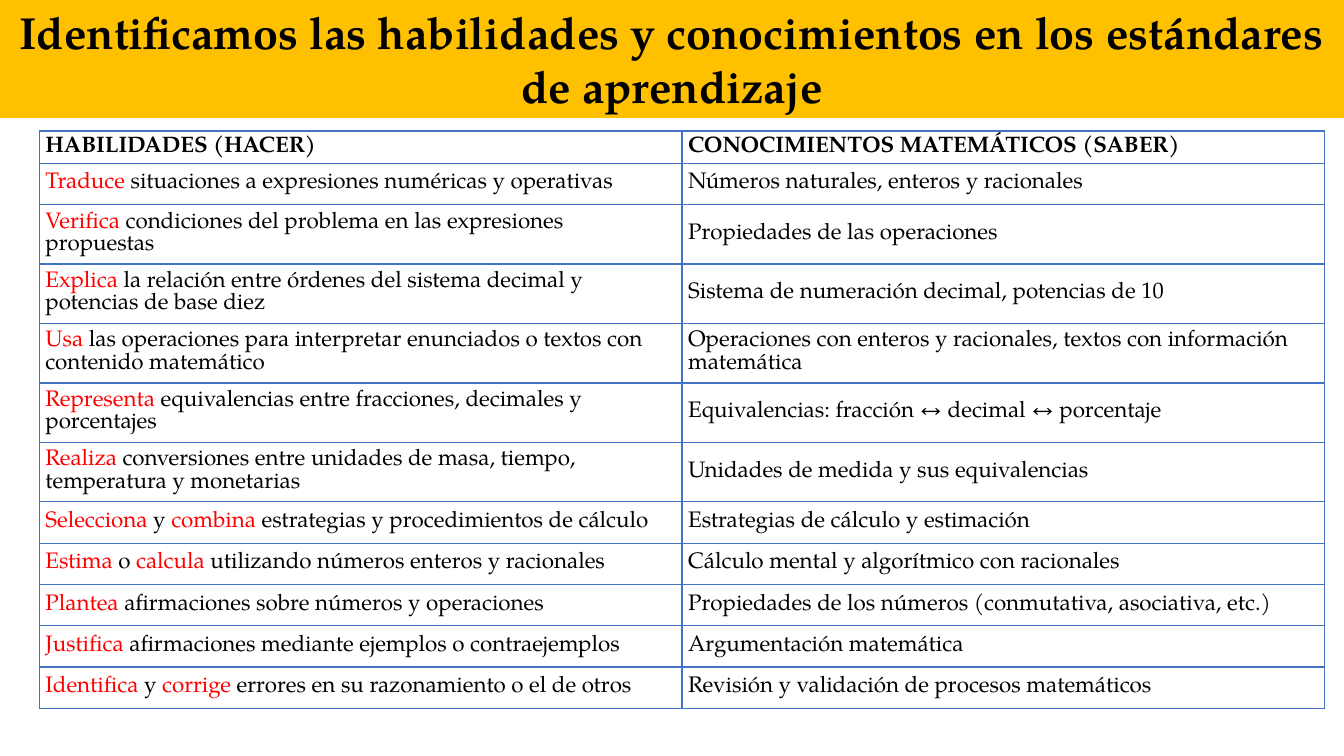
from lxml import etree
from pptx import Presentation
from pptx.dml.color import RGBColor
from pptx.enum.shapes import MSO_SHAPE
from pptx.enum.text import MSO_ANCHOR, PP_ALIGN
from pptx.oxml.ns import qn
from pptx.util import Inches, Pt

AMBER = RGBColor(0xFF, 0xC0, 0x00)
BLACK = RGBColor(0x00, 0x00, 0x00)
RED = RGBColor(0xFF, 0x00, 0x00)
BLUE = RGBColor(0x44, 0x72, 0xC4)
FONT = "TeX Gyre Pagella"
TITLE = "Identificamos las habilidades y conocimientos en los estándares de aprendizaje"
HEADINGS = ("HABILIDADES (HACER)", "CONOCIMIENTOS MATEMÁTICOS (SABER)")
STANDARDS = [
    ("*Traduce* situaciones a expresiones numéricas y operativas",
     "Números naturales, enteros y racionales"),
    ("*Verifica* condiciones del problema en las expresiones propuestas",
     "Propiedades de las operaciones"),
    ("*Explica* la relación entre órdenes del sistema decimal y potencias de base diez",
     "Sistema de numeración decimal, potencias de 10"),
    ("*Usa* las operaciones para interpretar enunciados o textos con contenido matemático",
     "Operaciones con enteros y racionales, textos con información matemática"),
    ("*Representa* equivalencias entre fracciones, decimales y porcentajes",
     "Equivalencias: fracción ↔ decimal ↔ porcentaje"),
    ("*Realiza* conversiones entre unidades de masa, tiempo, temperatura y monetarias",
     "Unidades de medida y sus equivalencias"),
    ("*Selecciona* y *combina* estrategias y procedimientos de cálculo",
     "Estrategias de cálculo y estimación"),
    ("*Estima* o *calcula* utilizando números enteros y racionales",
     "Cálculo mental y algorítmico con racionales"),
    ("*Plantea* afirmaciones sobre números y operaciones",
     "Propiedades de los números (conmutativa, asociativa, etc.)"),
    ("*Justifica* afirmaciones mediante ejemplos o contraejemplos",
     "Argumentación matemática"),
    ("*Identifica* y *corrige* errores en su razonamiento o el de otros",
     "Revisión y validación de procesos matemáticos"),
]
HEADING_HEIGHT, ONE_LINE_HEIGHT, TWO_LINE_HEIGHT = Inches(0.32), Inches(0.41), Inches(0.59)
ROW_HEIGHTS = [
    HEADING_HEIGHT, ONE_LINE_HEIGHT, *[TWO_LINE_HEIGHT] * 5, *[ONE_LINE_HEIGHT] * 5,
]
CELL_FORMAT = {
    "vertical_anchor": MSO_ANCHOR.MIDDLE,
    "margin_left": Inches(0.06),
    "margin_right": Inches(0.06),
    "margin_top": Inches(0.03),
    "margin_bottom": Inches(0.03),
}


def apply_format(target, values):
    """Set each attribute named in values on target."""
    for attribute, value in values.items():
        setattr(target, attribute, value)


def write_text(paragraph, text, size, bold=False):
    """Write text into a paragraph, with words between asterisks in red."""
    for position, part in enumerate(text.split("*")):
        if part:
            run = paragraph.add_run()
            run.text = part
            apply_format(run.font, {"name": FONT, "size": Pt(size), "bold": bold})
            run.font.color.rgb = RED if position % 2 else BLACK


def add_borders(cell):
    """Draw a thin blue line on the four sides of a cell."""
    properties = cell._tc.get_or_add_tcPr()
    for place, side in enumerate(("a:lnL", "a:lnR", "a:lnT", "a:lnB")):
        border = etree.Element(qn(side), w=str(Pt(1)))
        fill = etree.SubElement(border, qn("a:solidFill"))
        etree.SubElement(fill, qn("a:srgbClr"), val=str(BLUE))
        properties.insert(place, border)


def add_title_band(slide, width):
    """Add the amber band with the slide title."""
    band = slide.shapes.add_shape(MSO_SHAPE.RECTANGLE, 0, 0, width, Inches(1.17))
    band.shadow.inherit = False
    band.fill.solid()
    band.fill.fore_color.rgb = AMBER
    band.line.fill.background()
    band.text_frame.word_wrap = True
    title = band.text_frame.paragraphs[0]
    title.alignment = PP_ALIGN.CENTER
    write_text(title, TITLE, 32, bold=True)


def fill_cell(cell, text, is_heading):
    """Write and format one cell of the standards table."""
    apply_format(cell, CELL_FORMAT)
    cell.fill.background()
    add_borders(cell)
    paragraph = cell.text_frame.paragraphs[0]
    paragraph.line_spacing = Pt(16)
    write_text(paragraph, text, 16, bold=is_heading)


def add_standards_table(slide):
    """Add the table that pairs skills with mathematical knowledge."""
    entries = [HEADINGS, *STANDARDS]
    table = slide.shapes.add_table(
        len(entries), len(HEADINGS),
        Inches(0.39), Inches(1.3), Inches(12.75), sum(ROW_HEIGHTS),
    ).table
    apply_format(table, {"first_row": False, "horz_banding": False})
    for index, (entry, height) in enumerate(zip(entries, ROW_HEIGHTS)):
        table.rows[index].height = height
        for column, text in enumerate(entry):
            fill_cell(table.cell(index, column), text, index == 0)


def main():
    """Build the slide and save it."""
    presentation = Presentation()
    apply_format(presentation, {"slide_width": Inches(13.33), "slide_height": Inches(7.5)})
    slide = presentation.slides.add_slide(presentation.slide_layouts[6])
    add_title_band(slide, presentation.slide_width)
    add_standards_table(slide)
    presentation.save("out.pptx")


if __name__ == "__main__":
    main()
